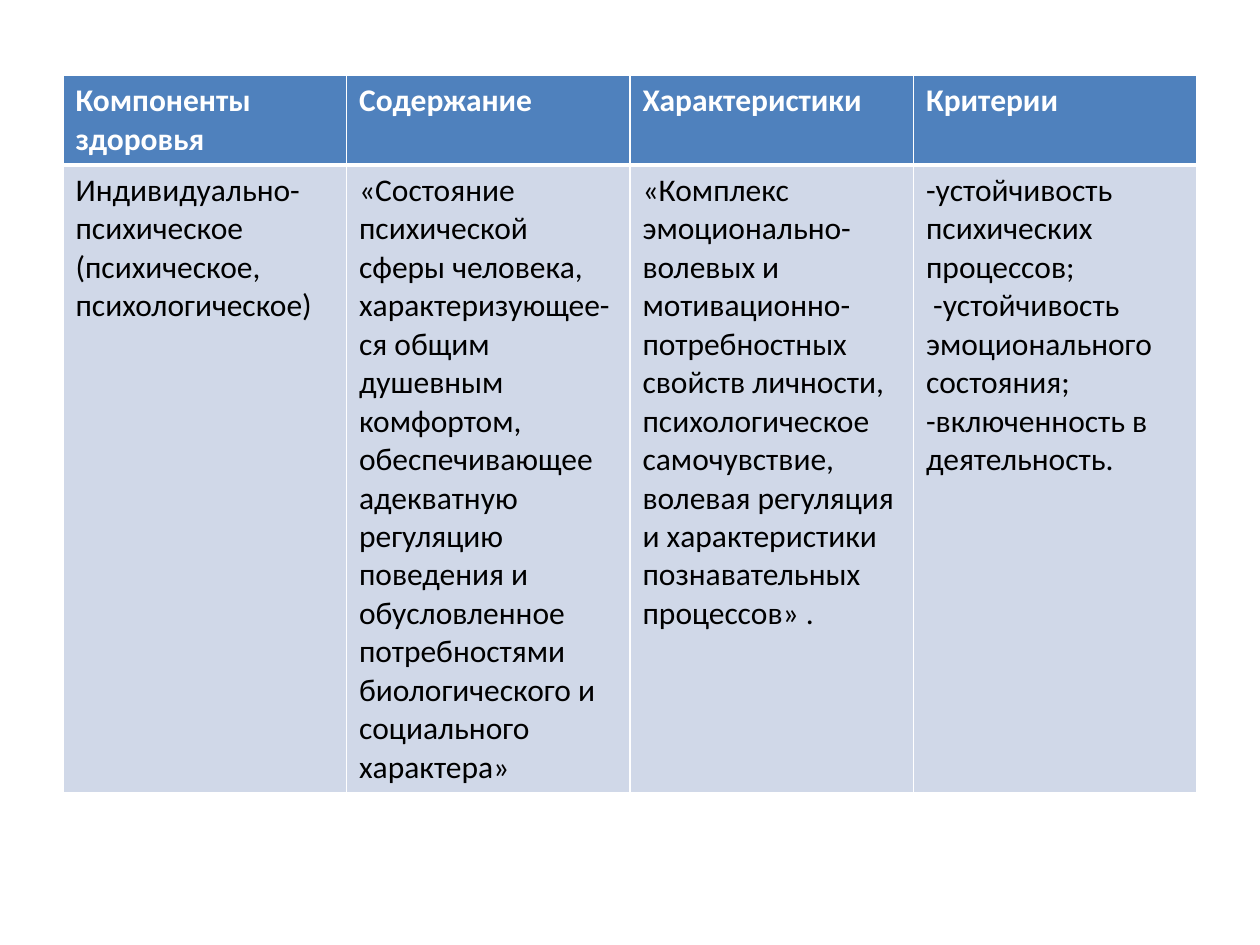
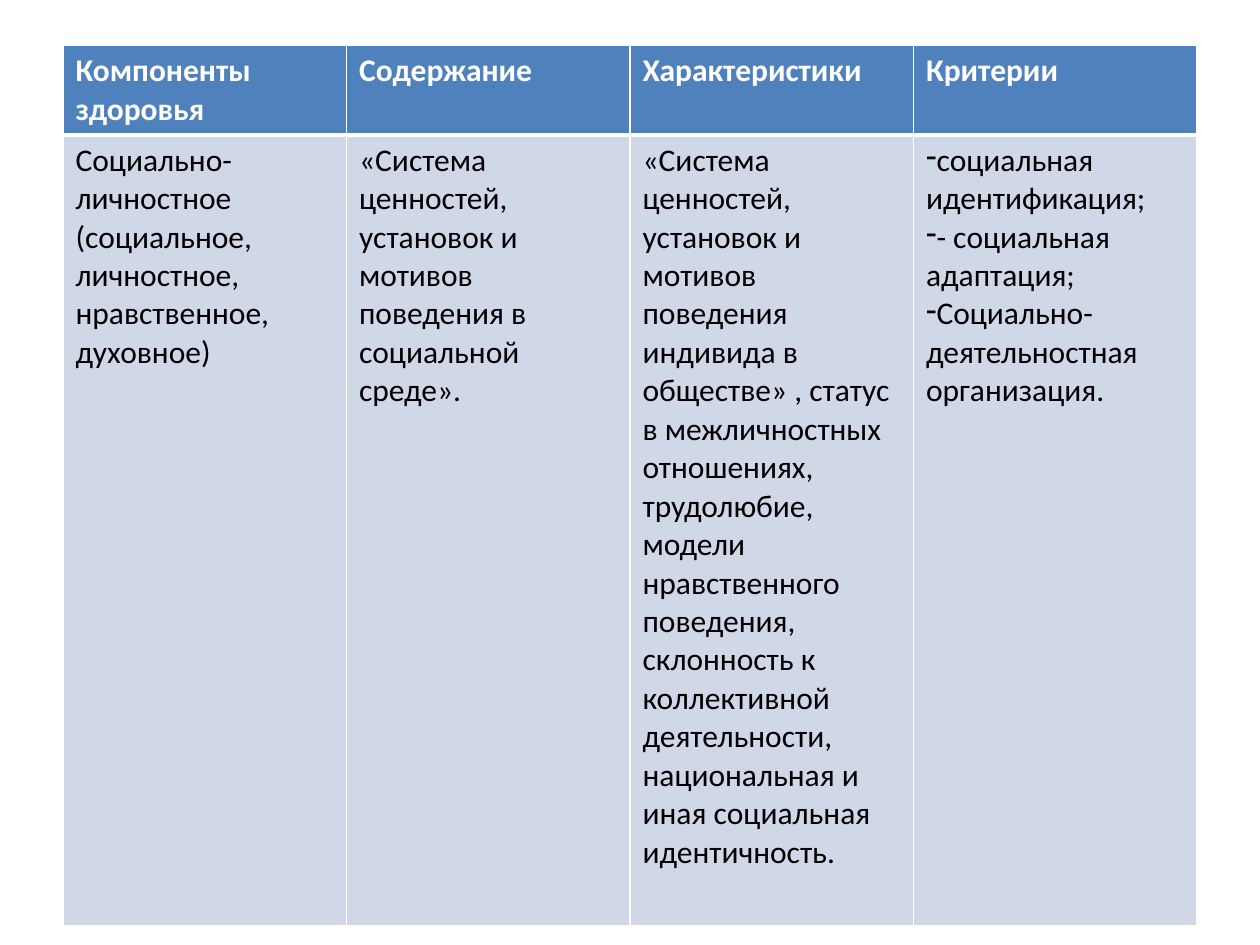
import pptx
import pptx.util
import pptx.dml.color
import pptx.oxml.ns
from lxml import etree

Inches = pptx.util.Inches
Pt = pptx.util.Pt
RGB = pptx.dml.color.RGBColor

WHITE = RGB(0xFF, 0xFF, 0xFF)
BLACK = RGB(0, 0, 0)
BLUE = RGB(0x4F, 0x81, 0xBD)
PALE = RGB(0xD0, 0xD8, 0xE8)
FONT = "Calibri"
HEADS = ["Компоненты здоровья", "Содержание", "Характеристики", "Критерии"]
HEAD_H = 0.7

MENTAL = [
    "Индивидуально-психическое (психическое, психологическое)",
    "«Состояние психической сферы человека, характеризующее-ся общим душевным "
    "комфортом, обеспечивающее адекватную регуляцию поведения и обусловленное "
    "потребностями биологического и социального характера»",
    "«Комплекс эмоционально-волевых и мотивационно-потребностных свойств "
    "личности, психологическое самочувствие, волевая регуляция и "
    "характеристики познавательных процессов» .",
    "-устойчивость психических процессов;\n"
    " -устойчивость эмоционального состояния;\n"
    "-включенность в деятельность.",
]
SOCIAL = [
    "Социально-личностное (социальное, личностное, нравственное, духовное)",
    "«Система ценностей, установок и мотивов поведения в социальной среде».",
    "«Система ценностей, установок и мотивов поведения индивида в обществе» , "
    "статус в межличностных отношениях, трудолюбие, модели нравственного "
    "поведения, склонность к коллективной деятельности, национальная и иная "
    "социальная идентичность.",
    "социальная идентификация;\n"
    "- социальная адаптация;\n"
    "Социально-деятельностная организация.",
]


def add_node(parent, tag, **attrs):
    """Append a DrawingML child element."""
    return etree.SubElement(parent, pptx.oxml.ns.qn(tag), attrs)


def set_edges(cell, top, bottom):
    """Draw white borders, one point wide at the sides."""
    props = cell._tc.get_or_add_tcPr()
    for side, width in zip("LRTB", (1, 1, top, bottom)):
        line = add_node(props, f"a:ln{side}", w=str(Pt(width)))
        fill = add_node(line, "a:solidFill")
        add_node(fill, "a:srgbClr", val=str(WHITE))


def fill_cell(cell, text, back, ink, bold):
    """Write and colour one cell."""
    cell.text_frame.text = text
    cell.fill.solid()
    cell.fill.fore_color.rgb = back
    for para in cell.text_frame.paragraphs:
        for run in para.runs:
            font = run.font
            font.name, font.size, font.bold = FONT, Pt(18), bold
            font.color.rgb = ink


def add_dashes(cell):
    """Give each paragraph a dash bullet without indent."""
    for para in cell.text_frame.paragraphs:
        props = para._p.get_or_add_pPr()
        props.set("marL", "0")
        props.set("indent", "0")
        add_node(props, "a:buFontTx")
        add_node(props, "a:buChar", char="-")


def add_grid(deck, top, body, texts):
    """Add a slide with a health table and return the table."""
    slide = deck.slides.add_slide(deck.slide_layouts[6])
    frame = slide.shapes.add_table(2, len(HEADS), Inches(0.5), Inches(top),
                                   Inches(9), Inches(HEAD_H + body))
    table = frame.table
    table.rows[0].height = Inches(HEAD_H)
    table.rows[1].height = Inches(body)
    for col, (head, text) in enumerate(zip(HEADS, texts)):
        upper, lower = table.cell(0, col), table.cell(1, col)
        set_edges(upper, 1, 3)
        set_edges(lower, 3, 1)
        fill_cell(upper, head, BLUE, WHITE, True)
        fill_cell(lower, text, PALE, BLACK, False)
    return table


def main():
    """Build and save both slides."""
    deck = pptx.Presentation()
    deck.slide_width, deck.slide_height = Inches(10), Inches(7.5)
    add_grid(deck, 0.6, 4.9, MENTAL)
    table = add_grid(deck, 0.36, 6.28, SOCIAL)
    add_dashes(table.cell(1, 3))
    deck.save("out.pptx")


if __name__ == "__main__":
    main()
